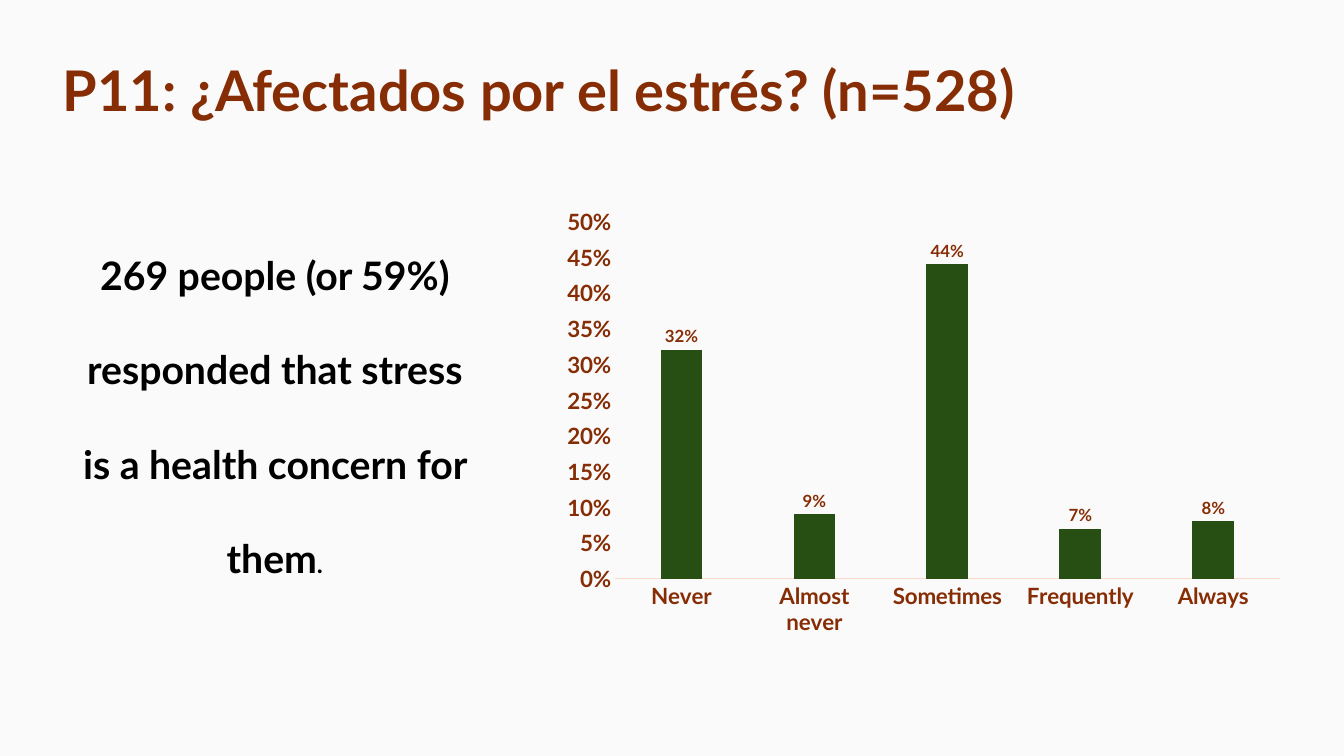
from pptx import Presentation
from pptx.chart.data import CategoryChartData
from pptx.dml.color import RGBColor
from pptx.enum.chart import XL_CHART_TYPE, XL_LABEL_POSITION, XL_TICK_MARK
from pptx.enum.text import MSO_ANCHOR, PP_ALIGN
from pptx.util import Inches, Pt

RUST = "862D05"
GREEN = "274E13"
PEACH = "FDD9C9"
BLACK = "000000"
PAPER = "FAFAFA"


def rgb(value):
    """Turn a hex string into a colour."""
    return RGBColor.from_string(value)


def style_font(font, size, color, bold=True, name="Lato"):
    """Set the face, size, weight and colour of a font."""
    font.name = name
    font.size = Pt(size)
    font.bold = bold
    font.color.rgb = rgb(color)


def add_run(p, text, size, color):
    """Append one bold run to a paragraph."""
    r = p.add_run()
    r.text = text
    style_font(r.font, size, color)


def add_title(s, text):
    """Place and format the title placeholder."""
    sp = s.shapes.title
    sp.left, sp.top = Inches(0.62), Inches(0.08)
    sp.width, sp.height = Inches(11.98), Inches(1.2)
    tf = sp.text_frame
    tf.margin_left = tf.margin_right = 0
    tf.vertical_anchor = MSO_ANCHOR.BOTTOM
    p = tf.paragraphs[0]
    p.alignment = PP_ALIGN.LEFT
    p.line_spacing = 0.9
    add_run(p, text, 40, RUST)


def add_finding(s, runs):
    """Add the centred finding beside the chart."""
    sp = s.shapes.add_textbox(Inches(0.62), Inches(1.98), Inches(4.21), Inches(4.48))
    tf = sp.text_frame
    tf.word_wrap = True
    p = tf.paragraphs[0]
    p.alignment = PP_ALIGN.CENTER
    p.line_spacing = 2.0
    for text, size in runs:
        add_run(p, text, size, BLACK)


def style_axis(axis):
    """Remove ticks and gridlines and set the label font of an axis."""
    axis.has_major_gridlines = False
    axis.major_tick_mark = axis.minor_tick_mark = XL_TICK_MARK.NONE
    style_font(axis.tick_labels.font, 16, RUST)


def add_stress_chart(s, answers):
    """Add the column chart of answer shares."""
    data = CategoryChartData(number_format="0%")
    data.categories = list(answers)
    data.add_series("Series 1", list(answers.values()))
    chart = s.shapes.add_chart(
        XL_CHART_TYPE.COLUMN_CLUSTERED,
        Inches(5.48), Inches(1.98), Inches(7.36), Inches(4.41), data,
    ).chart
    chart.has_legend = False
    chart.has_title = False
    style_font(chart.font, 10, RUST, bold=False, name="Arial")

    style_axis(chart.category_axis)
    line = chart.category_axis.format.line
    line.color.rgb = rgb(PEACH)
    line.width = Pt(0.75)

    axis = chart.value_axis
    style_axis(axis)
    axis.format.line.fill.background()
    axis.minimum_scale, axis.maximum_scale, axis.major_unit = 0, 0.5, 0.05
    axis.tick_labels.number_format = "0%"
    axis.tick_labels.number_format_is_linked = False

    plot = chart.plots[0]
    plot.vary_by_categories = False
    plot.gap_width = 219
    plot.overlap = -27
    series = plot.series[0]
    series.format.fill.solid()
    series.format.fill.fore_color.rgb = rgb(GREEN)
    labels = series.data_labels
    labels.show_value = True
    labels.position = XL_LABEL_POSITION.OUTSIDE_END
    labels.number_format = "0%"
    labels.number_format_is_linked = False
    style_font(labels.font, 12, RUST)


def main():
    """Build the slide and save it."""
    prs = Presentation()
    prs.slide_width, prs.slide_height = Inches(13.33), Inches(7.5)
    s = prs.slides.add_slide(prs.slide_layouts[5])
    s.background.fill.solid()
    s.background.fill.fore_color.rgb = rgb(PAPER)
    add_title(s, "P11: ¿Afectados por el estrés? (n=528)")
    add_finding(s, [
        ("269 people (or 59%) responded that stress is a health concern for them", 28),
        (".", 18),
    ])
    add_stress_chart(s, {
        "Never": 0.32,
        "Almost never": 0.09,
        "Sometimes": 0.44,
        "Frequently": 0.07,
        "Always": 0.08,
    })
    prs.save("out.pptx")


if __name__ == "__main__":
    main()
